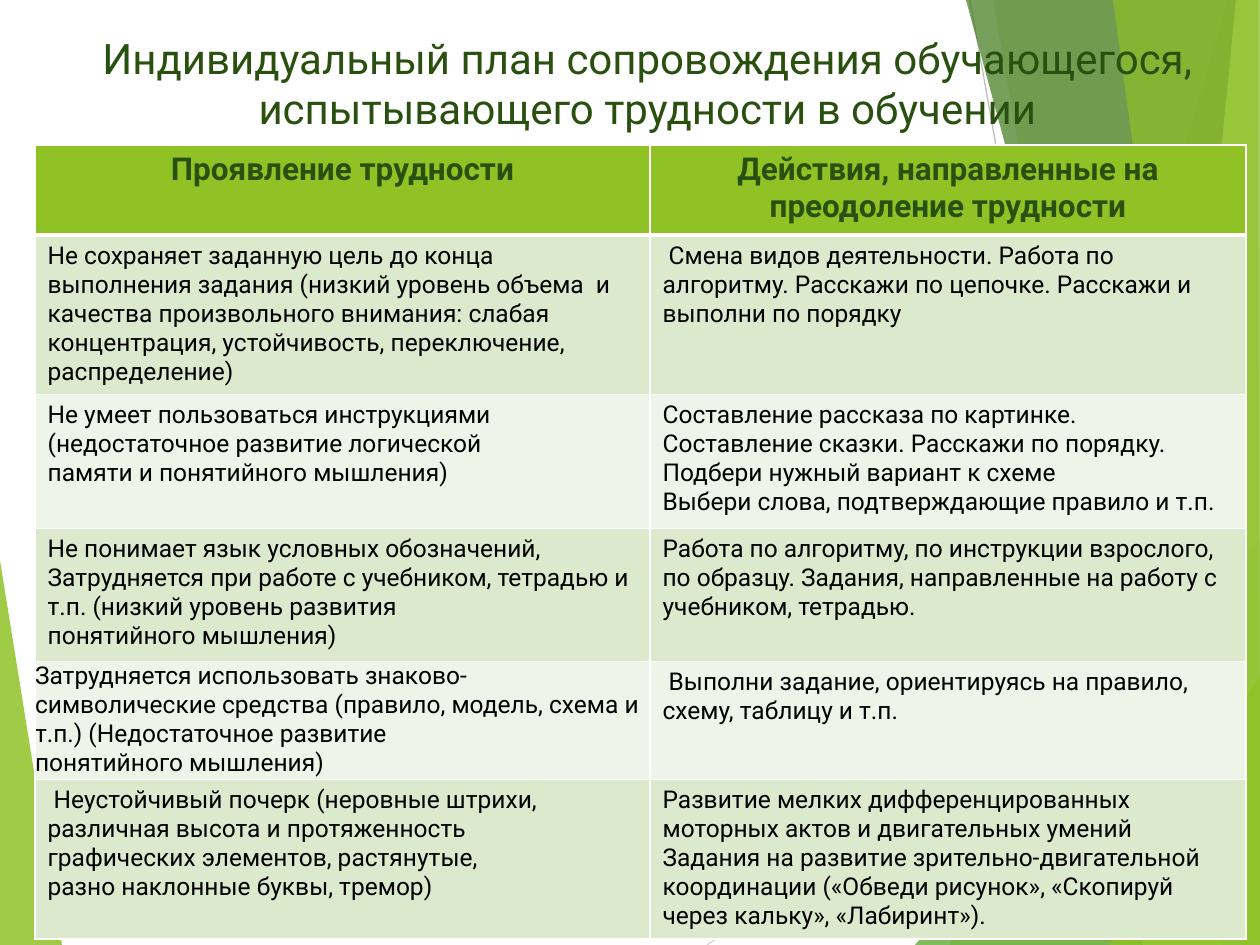
from lxml import etree
from pptx import Presentation, util as u
from pptx.dml.color import RGBColor
from pptx.enum import text
from pptx.enum.shapes import MSO_CONNECTOR
from pptx.oxml.ns import qn

PX = 914400 / 126
FONT = "Roboto"
COLORS = {
    "lime": "90C226", "leaf": "54A021", "forest": "3F7819", "pale": "C0E474",
    "heading": "2A5010", "body": "000000", "border": "FFFFFF",
    "odd_row": "DBE9CD", "even_row": "EEF4E8",
    "long_ray": "D9D9D9", "steep_ray": "BFBFBF",
}


def px(length):
    return u.Emu(round(length * PX))


def write(frame, lines, size, color, bold=False, align=text.PP_ALIGN.LEFT):
    """Fill a text frame, one paragraph for each line."""
    frame.text = "\n".join(lines)
    for paragraph in frame.paragraphs:
        paragraph.alignment = align
        paragraph.font.name = FONT
        paragraph.font.size = u.Pt(size)
        paragraph.font.bold = bold
        paragraph.font.color.rgb = RGBColor.from_string(COLORS[color])


prs = Presentation()
prs.slide_width, prs.slide_height = px(1260), px(945)
slide = prs.slides.add_slide(prs.slide_layouts[6])

# Background rays and facets
rays = [("long_ray", (707, 945, 1260, 576)), ("steep_ray", (970, 0, 1139, 945))]
for color, ends in rays:
    ray = slide.shapes.add_connector(MSO_CONNECTOR.STRAIGHT, *map(px, ends))
    ray.line.color.rgb = RGBColor.from_string(COLORS[color])
    ray.line.width = u.Pt(0.75)
    etree.SubElement(ray._element.spPr, qn("a:effectLst"))

facets = [  # colour, opacity in percent, corners
    ("lime", 85, [(0, 560), (62, 945), (0, 945)]),
    ("lime", 30, [(1228, 0), (950, 945), (1260, 945), (1260, 0)]),
    ("lime", 20, [(993, 0), (1158, 945), (1260, 945), (1260, 0)]),
    ("leaf", 72, [(915, 945), (1260, 541), (1260, 945)]),
    ("forest", 70, [(966, 0), (1222, 945), (1260, 945), (1260, 0)]),
    ("pale", 70, [(1236, 0), (1143, 945), (1260, 945), (1260, 0)]),
    ("lime", 65, [(1113, 0), (1242, 945), (1260, 945), (1258, 0)]),
    ("lime", 80, [(1110, 945), (1260, 674), (1260, 945)]),
]
for color, opacity, corners in facets:
    builder = slide.shapes.build_freeform(*corners[0], scale=PX)
    builder.add_line_segments(corners[1:], close=True)
    facet = builder.convert_to_shape()
    facet.shadow.inherit = False
    facet.line.fill.background()
    facet.fill.solid()
    facet.fill.fore_color.rgb = RGBColor.from_string(COLORS[color])
    tint = facet._element.spPr.find(qn("a:solidFill"))[0]
    etree.SubElement(tint, qn("a:alpha"), val=str(opacity * 1000))

# Title
title = slide.shapes.add_textbox(px(35), px(26), px(1225), px(129)).text_frame
title.word_wrap = True
write(title, ["Индивидуальный план сопровождения обучающегося, испытывающего трудности в обучении"],
      24, "heading", align=text.PP_ALIGN.CENTER)

# Difficulties and the actions that answer them
plan = [
    (["Проявление трудности"],
     ["Действия, направленные на преодоление трудности"]),
    (["Не сохраняет заданную цель до конца выполнения задания (низкий уровень объема  и "
      "качества произвольного внимания: слабая",
      "концентрация, устойчивость, переключение, распределение)"],
     [" Смена видов деятельности. Работа по алгоритму. Расскажи по цепочке. "
      "Расскажи и выполни по порядку"]),
    (["Не умеет пользоваться инструкциями (недостаточное развитие логической",
      "памяти и понятийного мышления)"],
     ["Составление рассказа по картинке. Составление сказки. Расскажи по порядку. "
      "Подбери нужный вариант к схеме",
      "Выбери слова, подтверждающие правило и т.п."]),
    (["Не понимает язык условных обозначений,",
      "Затрудняется при работе с учебником, тетрадью и т.п. (низкий уровень развития",
      "понятийного мышления)"],
     ["Работа по алгоритму, по инструкции взрослого,",
      "по образцу. Задания, направленные на работу с учебником, тетрадью."]),
    (["Затрудняется использовать знаково- символические средства (правило, модель, "
      "схема и т.п.) (Недостаточное развитие",
      "понятийного мышления)"],
     [" Выполни задание, ориентируясь на правило, схему, таблицу и т.п."]),
    ([" Неустойчивый почерк (неровные штрихи,",
      "различная высота и протяженность",
      "графических элементов, растянутые,",
      "разно наклонные буквы, тремор)"],
     ["Развитие мелких дифференцированных",
      "моторных актов и двигательных умений",
      "Задания на развитие зрительно-двигательной",
      "координации («Обведи рисунок», «Скопируй",
      "через кальку», «Лабиринт»)."]),
]
row_heights = [90, 156, 134, 133, 117, 157]
column_widths = [615, 596]
table = slide.shapes.add_table(len(plan), 2, px(35), px(145),
                               px(sum(column_widths)), px(sum(row_heights))).table
for column, width in zip(table.columns, column_widths):
    column.width = px(width)

for r, (row, height) in enumerate(zip(plan, row_heights)):
    table.rows[r].height = px(height)
    for c, lines in enumerate(row):
        cell = table.cell(r, c)
        for side in "LRTB":
            under_header = (r, side) in [(0, "B"), (1, "T")]
            border = etree.SubElement(cell._tc.get_or_add_tcPr(), qn(f"a:ln{side}"),
                                      w=str(u.Pt(3 if under_header else 1)))
            paint = etree.SubElement(border, qn("a:solidFill"))
            etree.SubElement(paint, qn("a:srgbClr"), val=COLORS["border"])
        cell.fill.solid()
        shade = "lime" if r == 0 else "odd_row" if r % 2 else "even_row"
        cell.fill.fore_color.rgb = RGBColor.from_string(COLORS[shade])
        if r == 0:
            write(cell.text_frame, lines, 18, "heading", True, text.PP_ALIGN.CENTER)
        else:
            write(cell.text_frame, lines, 14, "body")

tight = table.cell(4, 0)
tight.margin_left = tight.margin_right = tight.margin_top = tight.margin_bottom = 0

prs.save("out.pptx")
